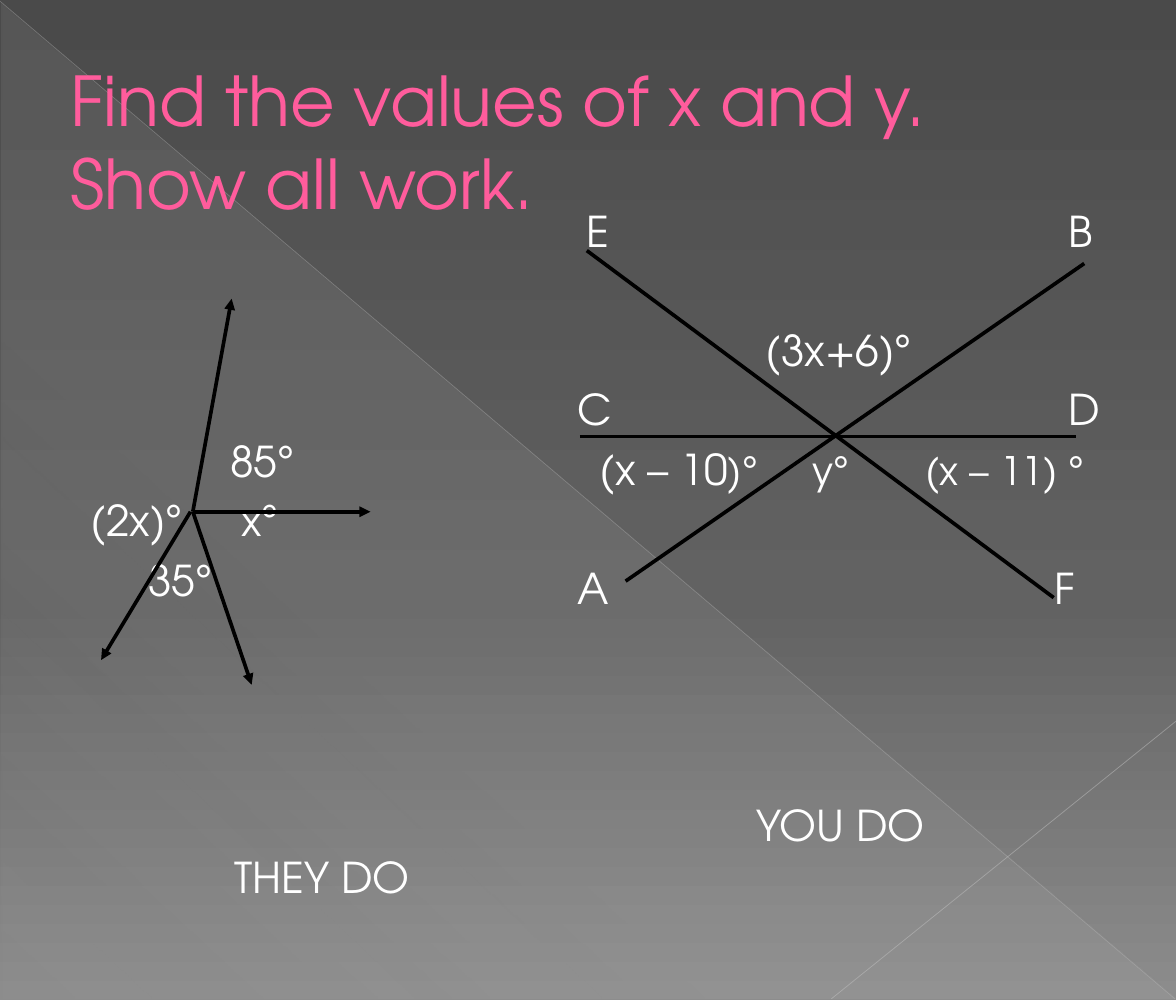
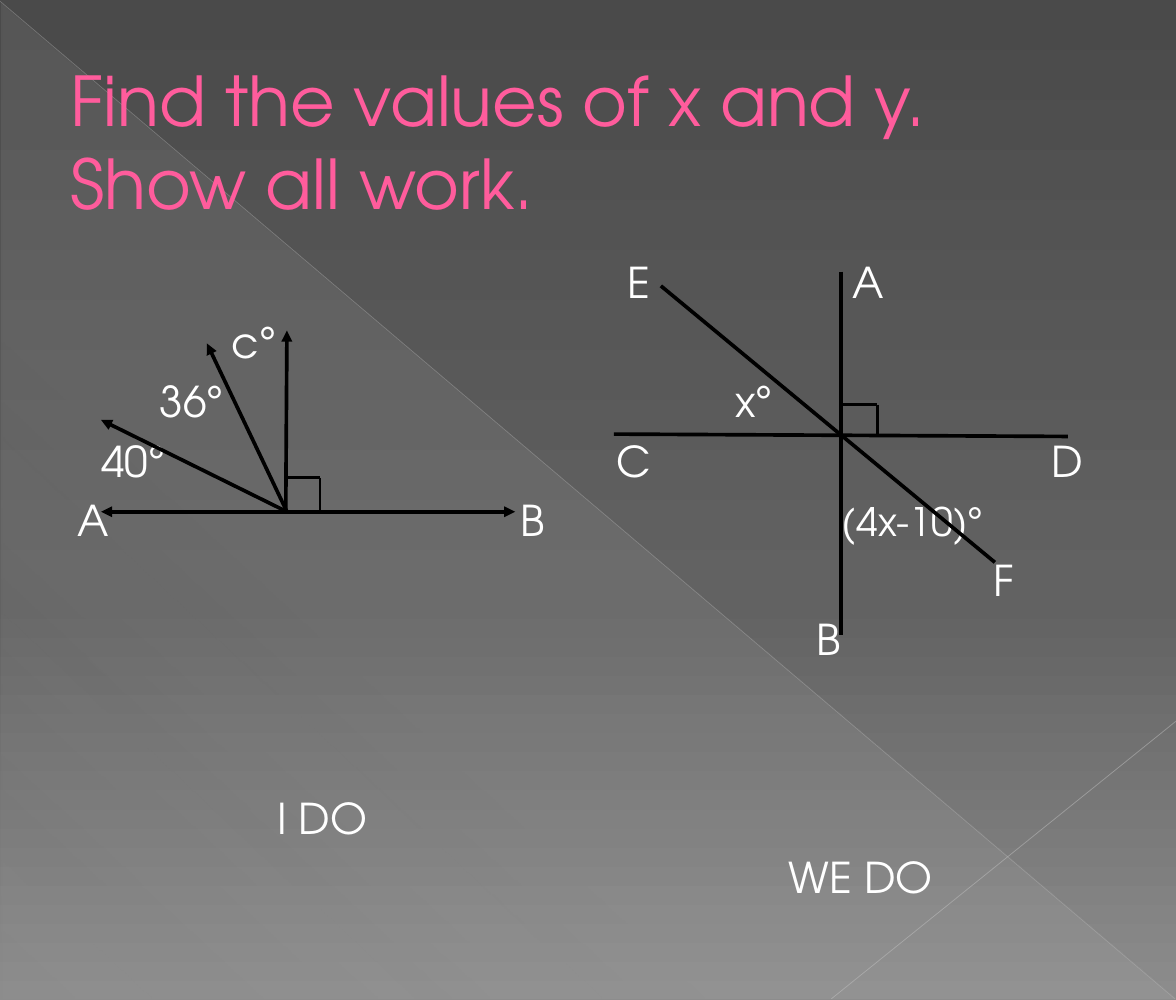
from dataclasses import dataclass

from lxml.etree import SubElement
from pptx import Presentation
from pptx.dml.color import RGBColor
from pptx.enum.shapes import MSO_CONNECTOR, MSO_SHAPE
from pptx.enum.text import MSO_ANCHOR, PP_ALIGN
from pptx.oxml.ns import qn
from pptx.util import Inches, Pt


@dataclass(frozen=True)
class Theme:
    font: str = "TeX Gyre Adventor"
    title_color: str = "FF5C9C"
    text_color: str = "FFFFFF"
    line_color: str = "000000"
    title_size: int = 42
    label_size: int = 26
    small_size: int = 24
    line_width: float = 2.25
    mark_width: float = 1.5
    # Gradient stops: position %, colour, opacity %
    background: tuple = ((0, "4A4A4A", 100), (60, "626262", 100), (100, "8C8C8C", 100))
    band: tuple = ((0, "D2D2D2", 10), (70, "D2D2D2", 8), (100, "D2D2D2", 1))


THEME = Theme()
TITLE = "Find the values of x and y. Show all work."
ROW_HEIGHT = THEME.label_size * 1.4 / 72  # line of 1.2 em plus 0.2 em spacing


# Fills and lines
def set_alpha(color_element, percent):
    if percent < 100:
        SubElement(color_element, qn("a:alpha")).set("val", str(percent * 1000))


def fill_gradient(fill, element, stops, angle):
    fill.gradient()
    gradient = element.find(".//" + qn("a:gradFill"))
    stop_list = gradient.find(qn("a:gsLst"))
    for old_stop in list(stop_list):
        stop_list.remove(old_stop)
    for position, color, opacity in stops:
        stop = SubElement(stop_list, qn("a:gs"))
        stop.set("pos", str(position * 1000))
        color_element = SubElement(stop, qn("a:srgbClr"))
        color_element.set("val", color)
        set_alpha(color_element, opacity)
    gradient.find(qn("a:lin")).set("ang", str(angle * 60000))


def add_line(slide, start, end, width=THEME.line_width, color=THEME.line_color,
             opacity=100, arrow=False):
    connector = slide.shapes.add_connector(
        MSO_CONNECTOR.STRAIGHT, *(Inches(value) for value in (*start, *end)))
    connector.line.width = Pt(width)
    connector.line.color.rgb = RGBColor.from_string(color)
    properties = connector.element.spPr
    set_alpha(properties.find(".//" + qn("a:srgbClr")), opacity)
    if arrow:
        SubElement(properties.find(qn("a:ln")), qn("a:tailEnd")).set("type", "triangle")
    SubElement(properties, qn("a:effectLst"))


def add_rays(slide, rays):
    for start, end in rays:
        add_line(slide, start, end, arrow=True)


def add_segments(slide, segments):
    for start, end in segments:
        add_line(slide, start, end)


def add_right_angle(slide, left, top, right, bottom):
    add_line(slide, (left, top), (right, top), THEME.mark_width)
    add_line(slide, (right, top), (right, bottom), THEME.mark_width)


# Text
def style(font, size, color=THEME.text_color):
    font.name = THEME.font
    font.size = Pt(size)
    font.color.rgb = RGBColor.from_string(color)


def add_label(slide, text, left, top, width, size=THEME.label_size, small_end=""):
    box = slide.shapes.add_textbox(
        Inches(left), Inches(top), Inches(width), Inches(size * 1.2 / 72))
    frame = box.text_frame
    frame.margin_left = frame.margin_right = frame.margin_top = frame.margin_bottom = 0
    paragraph = frame.paragraphs[0]
    paragraph.add_run().text = text
    style(paragraph.font, size)
    if small_end:
        run = paragraph.add_run()
        run.text = small_end
        run.font.size = Pt(THEME.small_size)
    return paragraph


def add_diagram_labels(slide, first_top, labels):
    """Each label is text, left, row and, if needed, size and a smaller ending."""
    for text, left, row, *options in labels:
        size = options[0] if options else THEME.label_size
        baseline_shift = (THEME.label_size - size) / 72
        top = first_top + row * ROW_HEIGHT + baseline_shift
        width = 0.3 + 0.18 * (len(text) - 1)
        add_label(slide, text, left, top, width, *options)


def add_caption(slide, text, center, first_top, row):
    width = 2
    paragraph = add_label(slide, text, center - width / 2, first_top + row * ROW_HEIGHT, width)
    paragraph.alignment = PP_ALIGN.CENTER


def add_title(slide):
    box = slide.shapes.add_textbox(Inches(0.5), Inches(0.33), Inches(9), Inches(1.73))
    frame = box.text_frame
    frame.word_wrap = True
    frame.vertical_anchor = MSO_ANCHOR.MIDDLE
    frame.text = TITLE
    style(frame.paragraphs[0].font, THEME.title_size, THEME.title_color)


# Shared slide design
def add_base_slide(presentation):
    slide = presentation.slides.add_slide(presentation.slide_layouts[6])
    fill_gradient(slide.background.fill, slide.element, THEME.background, 90)
    band = slide.shapes.add_shape(
        MSO_SHAPE.RIGHT_TRIANGLE, Inches(0.01), Inches(0.02), Inches(9.99), Inches(8.47))
    band.shadow.inherit = False
    band.line.fill.background()
    fill_gradient(band.fill, band.element, THEME.band, 133)
    add_line(slide, (0, 0.01), (9.99, 8.49), 0.39, "BFBFBF", 35)
    add_line(slide, (10, 6.13), (7.07, 8.49), 0.47, "C6C6C6", 45)
    add_title(slide)
    return slide


# Slides
def build_practice_slide(presentation):
    slide = add_base_slide(presentation)
    left_top, right_top = 2.18, 1.74
    add_diagram_labels(slide, left_top, [
        ("85°", 1.96, 3), ("(2x)°", 0.77, 4), ("x°", 2.05, 4), ("35°", 1.26, 5)])
    add_caption(slide, "THEY DO", 2.74, left_top, 10)
    add_diagram_labels(slide, right_top, [
        ("E", 4.99, 0), ("B", 9.09, 0), ("(3x+6)°", 6.51, 2),
        ("C", 4.91, 3), ("D", 9.09, 3),
        ("(x – 10", 5.1, 4, THEME.label_size, ")°"),
        ("y°", 6.91, 4, THEME.small_size), ("(x – 11) °", 7.87, 4, THEME.small_size),
        ("A", 4.91, 6), ("F", 8.97, 6)])
    add_caption(slide, "YOU DO", 7.15, right_top, 10)

    vertex = (1.64, 4.35)
    add_rays(slide, [
        (vertex, (1.97, 2.54)), (vertex, (3.15, 4.35)), (vertex, (2.14, 5.82)),
        ((1.62, 4.35), (0.86, 5.61))])
    add_segments(slide, [
        ((9.22, 2.24), (5.32, 4.94)), ((4.93, 3.71), (9.15, 3.71)),
        ((4.99, 2.13), (8.96, 5.08))])


def build_example_slide(presentation):
    slide = add_base_slide(presentation)
    top = 2.18
    add_diagram_labels(slide, top, [
        ("c°", 1.97, 1), ("36°", 1.36, 2), ("40°", 0.86, 3),
        ("A", 0.66, 4), ("B", 4.43, 4)])
    add_caption(slide, "I DO", 2.74, top, 9)
    add_diagram_labels(slide, top, [
        ("E", 5.34, 0), ("A", 7.25, 0), ("x°", 6.25, 2), ("C", 5.24, 3), ("D", 8.94, 3),
        ("(4x-10)°", 7.16, 4, THEME.small_size), ("F", 8.45, 5), ("B", 6.94, 6)])
    add_caption(slide, "WE DO", 7.32, top, 10)

    vertex = (2.44, 4.35)
    add_rays(slide, [
        ((2.89, 4.35), (0.86, 4.35)), ((2.86, 4.35), (4.38, 4.35)),
        (vertex, (0.86, 3.57)), ((2.43, 4.35), (2.44, 2.81)), (vertex, (1.76, 2.92))])
    add_right_angle(slide, 2.44, 4.06, 2.72, 4.35)
    add_segments(slide, [
        ((7.15, 2.31), (7.15, 5.4)), ((5.22, 3.69), (9.08, 3.71)),
        ((5.62, 2.43), (8.46, 4.78))])
    add_right_angle(slide, 7.15, 3.44, 7.46, 3.69)


def main():
    presentation = Presentation()
    presentation.slide_width = Inches(10)
    presentation.slide_height = Inches(8.5)
    build_practice_slide(presentation)
    build_example_slide(presentation)
    presentation.save("out.pptx")


if __name__ == "__main__":
    main()
